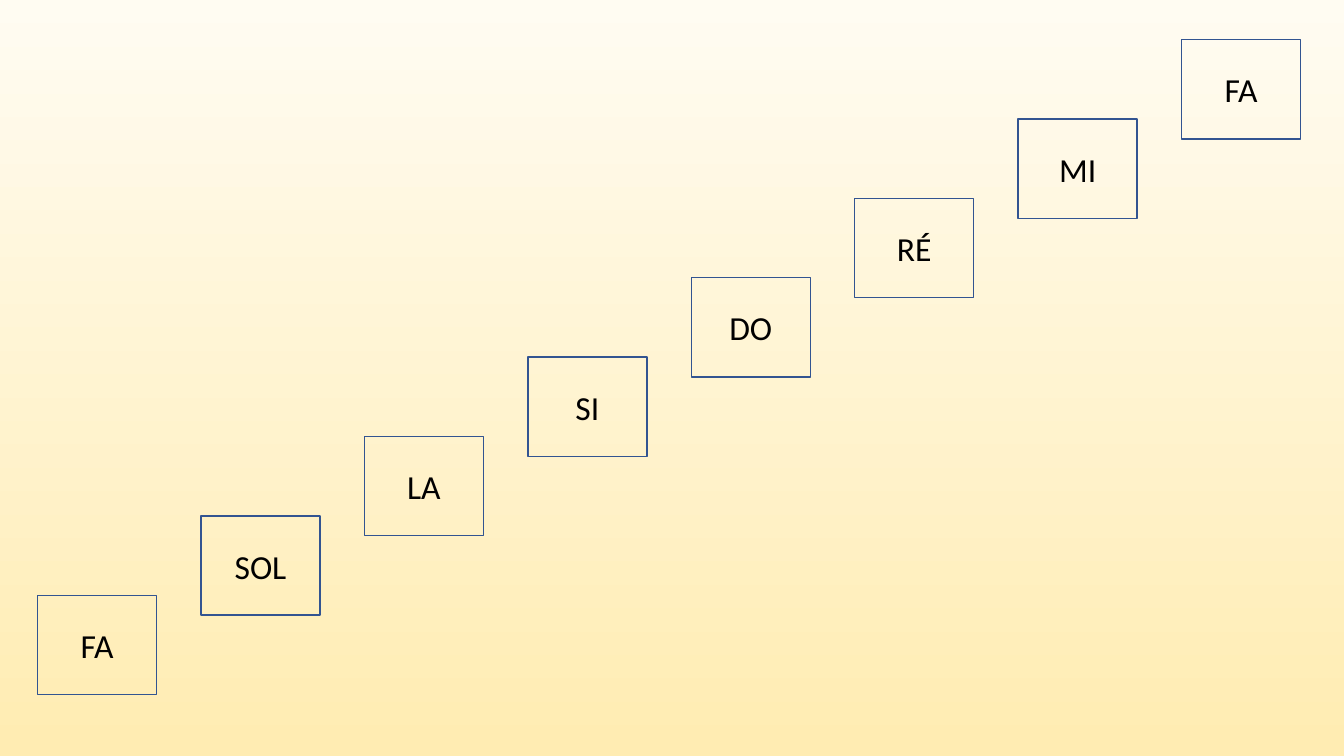
from pptx import Presentation
from pptx.dml.color import RGBColor
from pptx.enum.shapes import MSO_SHAPE
from pptx.enum.text import MSO_ANCHOR, PP_ALIGN
from pptx.util import Pt

NOTES = ["FA", "SOL", "LA", "SI", "DO", "RÉ", "MI", "FA"]
NOTE_WIDTH = 85
NOTE_HEIGHT = 70.9


def color(hex_string):
    return RGBColor.from_string(hex_string)


def paint_background(slide):
    fill = slide.background.fill
    fill.gradient()
    fill.gradient_angle = 270
    stops = [(0, "FFFCF2"), (0.99, "FFECB2")]
    for stop, (position, hex_string) in zip(fill.gradient_stops, stops):
        stop.position = position
        stop.color.rgb = color(hex_string)


def add_note(slide, name, left, top, width, height):
    shape = slide.shapes.add_shape(
        MSO_SHAPE.RECTANGLE, Pt(left), Pt(top), Pt(width), Pt(height))
    shape.shadow.inherit = False
    shape.fill.background()
    shape.line.color.rgb = color("325491")
    shape.line.width = Pt(1)
    text_frame = shape.text_frame
    text_frame.word_wrap = True
    text_frame.vertical_anchor = MSO_ANCHOR.MIDDLE
    paragraph = text_frame.paragraphs[0]
    paragraph.alignment = PP_ALIGN.CENTER
    run = paragraph.add_run()
    run.text = name
    run.font.name = "Calibri"
    run.font.size = Pt(24)
    run.font.color.rgb = color("000000")


def add_scale(slide, left, top, width, height):
    last = len(NOTES) - 1
    step_right = (width - NOTE_WIDTH) / last
    step_up = (height - NOTE_HEIGHT) / last
    for index, name in enumerate(NOTES):
        add_note(slide, name, left + index * step_right,
                 top + (last - index) * step_up, NOTE_WIDTH, NOTE_HEIGHT)


def main():
    presentation = Presentation()
    presentation.slide_width = Pt(960)
    presentation.slide_height = Pt(540)
    slide = presentation.slides.add_slide(presentation.slide_layouts[6])
    paint_background(slide)
    add_scale(slide, 26.8, 28.3, 902.2, 467.8)
    presentation.save("out.pptx")


if __name__ == "__main__":
    main()
